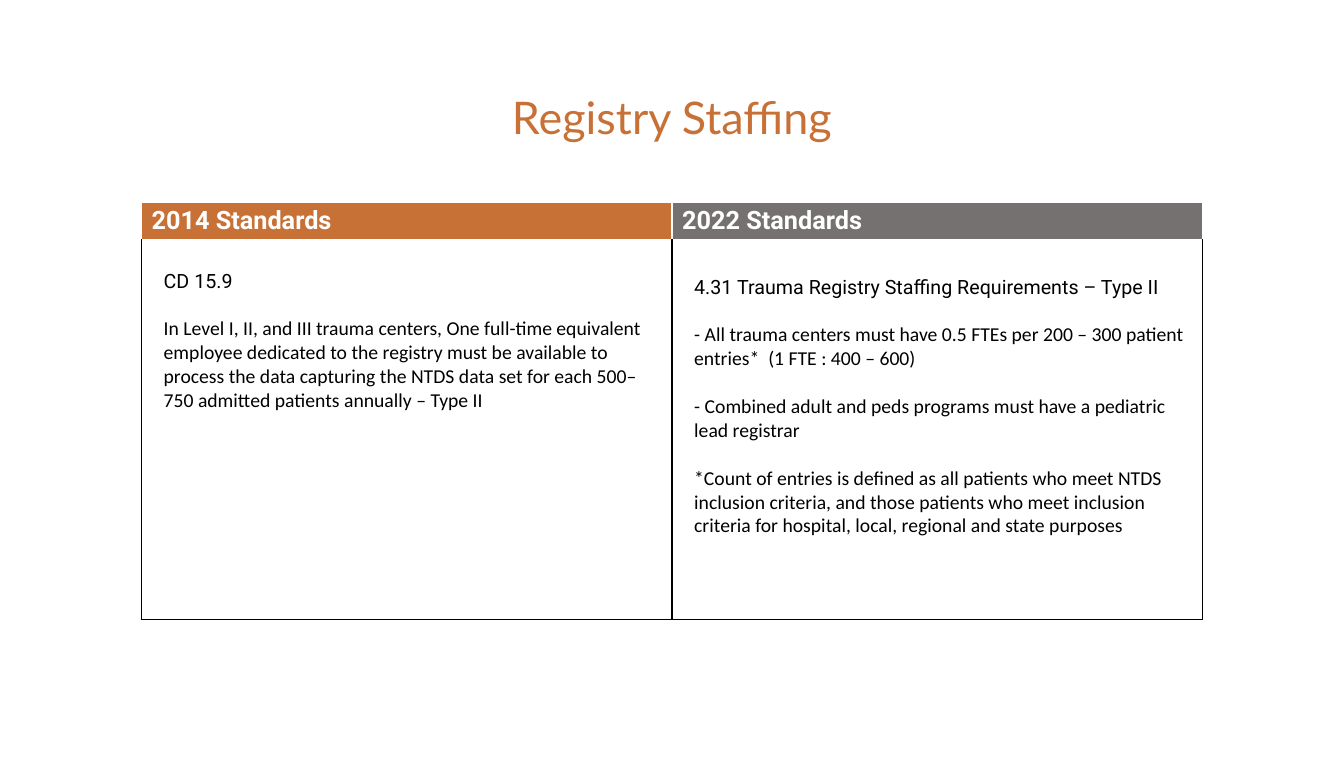
from dataclasses import dataclass

from lxml.etree import SubElement
from pptx import Presentation
from pptx.dml.color import RGBColor as RGB
from pptx.enum.text import MSO_ANCHOR as ANCHOR, MSO_AUTO_SIZE as AUTO, PP_ALIGN as ALIGN
from pptx.oxml.ns import qn
from pptx.util import Inches, Pt


@dataclass(frozen=True)
class Theme:
    orange: str = "C87137"
    gray: str = "767171"
    white: str = "FFFFFF"
    black: str = "000000"
    title_font: str = "Lato"
    head_font: str = "Roboto"
    body_font: str = "Calibri"
    title_size: int = 32
    head_size: int = 18
    body_size: int = 14
    gap: int = 17


T = Theme()
WIDTH, HEIGHT = Inches(13.3), Inches(7.5)
TABLE_LEFT, TABLE_TOP = Inches(1.4), Inches(2)
ROWS = Inches(0.38), Inches(3.75)

TITLE_FONT = dict(name=T.title_font, size=Pt(T.title_size), bold=False)
HEAD_FONT = dict(name=T.head_font, size=Pt(T.head_size), bold=True)
CODE_FONT = dict(name=T.head_font, size=Pt(T.body_size), bold=False)
BODY_FONT = dict(CODE_FONT, name=T.body_font)

HEAD_CELL = dict(margin_top=Inches(0.04), margin_bottom=Inches(0.04),
                 vertical_anchor=ANCHOR.MIDDLE)
BODY_CELL = dict(margin_left=Inches(0.22), vertical_anchor=ANCHOR.TOP)

STANDARDS = [
    ("2014 Standards", T.orange, 0.29, "CD 15.9", [
        "In Level I, II, and III trauma centers, One full-time equivalent employee "
        "dedicated to the registry must be available to process the data capturing "
        "the NTDS data set for each 500–750 admitted patients annually – Type II",
    ]),
    ("2022 Standards", T.gray, 0.35,
     "4.31 Trauma Registry Staffing Requirements – Type II", [
         "- All trauma centers must have 0.5 FTEs per 200 – 300 patient entries*  "
         "(1 FTE : 400 – 600)",
         "- Combined adult and peds programs must have a pediatric lead registrar",
         "*Count of entries is defined as all patients who meet NTDS inclusion "
         "criteria, and those patients who meet inclusion criteria for hospital, "
         "local, regional and state purposes",
     ]),
]


def apply(obj, values):
    for name, value in values.items():
        setattr(obj, name, value)


def write(p, text, font, color):
    r = p.add_run()
    r.text = text
    apply(r.font, font)
    r.font.color.rgb = RGB.from_string(color)


def add_borders(cell, borders):
    """Add the cell's side lines, which must come before its fill."""
    tc_pr = cell._tc.get_or_add_tcPr()
    for side, (color, width) in zip("LRTB", borders):
        ln = SubElement(tc_pr, qn(f"a:ln{side}"), w=str(Pt(width)))
        SubElement(SubElement(ln, qn("a:solidFill")), qn("a:srgbClr"), val=color)


def set_title(slide, text):
    sp = slide.shapes.title
    apply(sp, dict(left=0, top=Inches(0.83), width=WIDTH, height=Inches(0.64)))
    tf = sp.text_frame
    apply(tf, dict(word_wrap=True, auto_size=AUTO.SHAPE_TO_FIT_TEXT,
                   vertical_anchor=ANCHOR.MIDDLE))
    p = tf.paragraphs[0]
    p.alignment = ALIGN.CENTER
    write(p, text, TITLE_FONT, T.orange)


def fill_head(cell, text, color):
    apply(cell, HEAD_CELL)
    add_borders(cell, [(T.white, 1)] * 3 + [(T.white, 3)])
    cell.fill.solid()
    cell.fill.fore_color.rgb = RGB.from_string(color)
    write(cell.text_frame.paragraphs[0], text, HEAD_FONT, T.white)


def fill_body(cell, inset, code, rules):
    apply(cell, dict(BODY_CELL, margin_top=Inches(inset)))
    line = (T.black, 1)
    add_borders(cell, [line, line, (T.white, 1), line])
    cell.fill.background()
    tf = cell.text_frame
    write(tf.paragraphs[0], code, CODE_FONT, T.black)
    for rule in rules:
        p = tf.add_paragraph()
        p.space_before = Pt(T.gap)
        write(p, rule, BODY_FONT, T.black)


def add_standards(slide, standards):
    table = slide.shapes.add_table(len(ROWS), len(standards), TABLE_LEFT, TABLE_TOP,
                                   WIDTH - 2 * TABLE_LEFT, sum(ROWS)).table
    table.horz_banding = False
    for row, height in zip(table.rows, ROWS):
        row.height = height
    for col, (head, color, inset, code, rules) in enumerate(standards):
        fill_head(table.cell(0, col), head, color)
        fill_body(table.cell(1, col), inset, code, rules)


def main():
    prs = Presentation()
    apply(prs, dict(slide_width=WIDTH, slide_height=HEIGHT))
    slide = prs.slides.add_slide(prs.slide_layouts[5])
    set_title(slide, "Registry Staffing")
    add_standards(slide, STANDARDS)
    prs.save("out.pptx")


if __name__ == "__main__":
    main()
